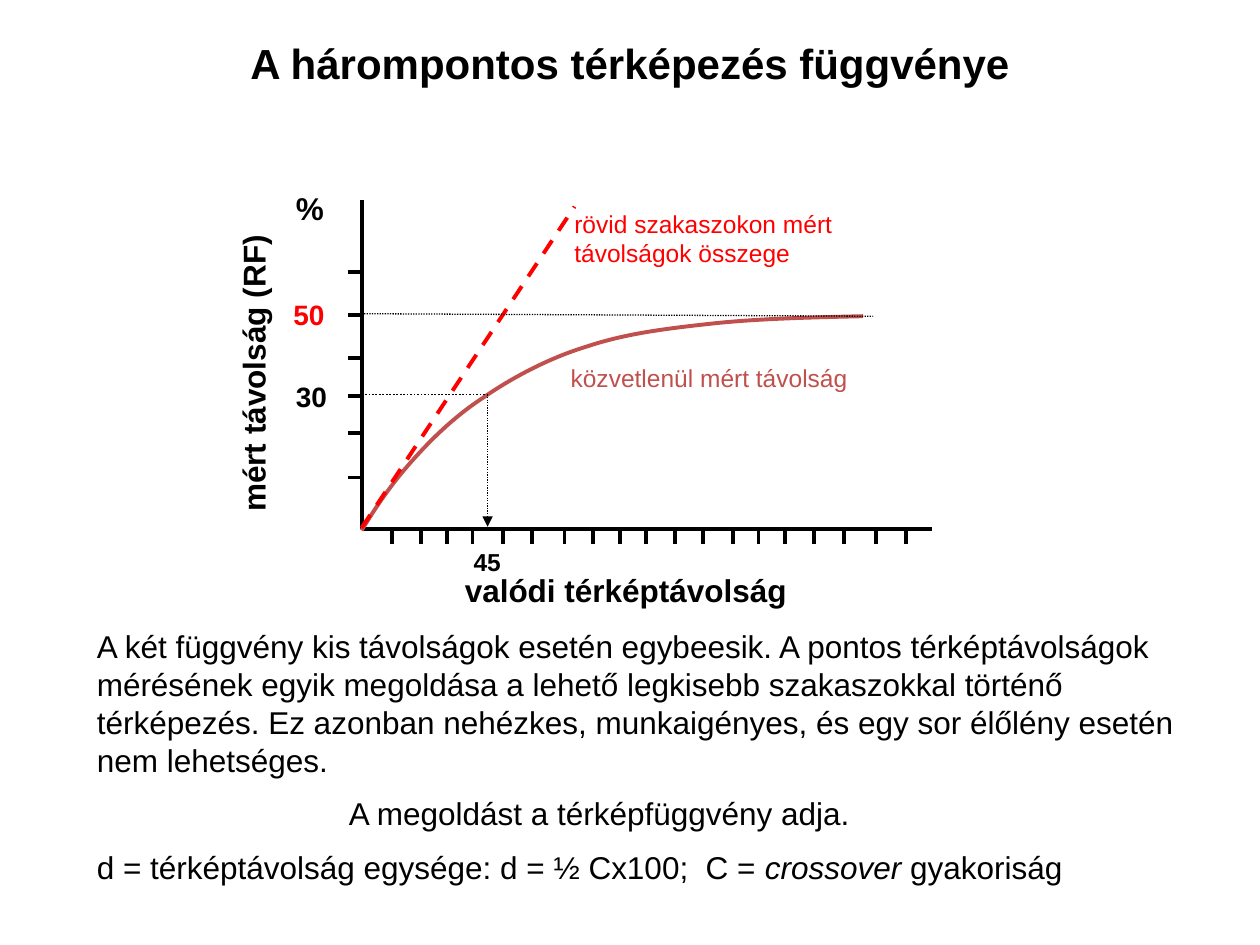
from dataclasses import dataclass

from lxml.etree import SubElement
from pptx import Presentation
from pptx.dml.color import RGBColor
from pptx.enum.dml import MSO_LINE
from pptx.enum.shapes import MSO_CONNECTOR
from pptx.enum.text import MSO_AUTO_SIZE, PP_ALIGN
from pptx.oxml.ns import qn
from pptx.util import Inches, Pt

COLORS = {"black": "000000", "red": "FF0000", "curve": "C0504D"}
ORIGIN_X = 2.87
AXIS_Y = 4.2


@dataclass
class Line:
    start: tuple[float, float]
    end: tuple[float, float]
    color: str = "black"
    width: float = 2.25
    dash: MSO_LINE | None = None
    arrow: bool = False


@dataclass
class Label:
    paragraphs: list[str]
    left: float
    top: float
    width: float
    height: float
    size: int = 18
    color: str = "black"
    bold: bool = True
    wrap: bool = False
    rotation: int = 0
    align: PP_ALIGN = PP_ALIGN.LEFT


def add_span(para, text: str, *, size: int = 18, color: str = "black",
             bold: bool = False, italic: bool = False) -> None:
    span = para.add_run()
    span.text = text
    span.font.name = "Arial"
    span.font.size = Pt(size)
    span.font.bold = bold
    span.font.italic = italic
    span.font.color.rgb = RGBColor.from_string(COLORS[color])


def add_box(page, left: float, top: float, width: float, height: float, wrap: bool):
    box = page.shapes.add_textbox(Inches(left), Inches(top), Inches(width), Inches(height))
    box.text_frame.word_wrap = wrap
    box.text_frame.auto_size = MSO_AUTO_SIZE.SHAPE_TO_FIT_TEXT
    return box


def add_label(page, label: Label) -> None:
    box = add_box(page, label.left, label.top, label.width, label.height, label.wrap)
    box.rotation = label.rotation
    for index, text in enumerate(label.paragraphs):
        para = box.text_frame.add_paragraph() if index else box.text_frame.paragraphs[0]
        para.alignment = label.align
        add_span(para, text, size=label.size, color=label.color, bold=label.bold)


def add_line(page, line: Line) -> None:
    connector = page.shapes.add_connector(
        MSO_CONNECTOR.STRAIGHT, *map(Inches, (*line.start, *line.end)))
    connector.line.color.rgb = RGBColor.from_string(COLORS[line.color])
    connector.line.width = Pt(line.width)
    if line.dash:
        connector.line.dash_style = line.dash
    if line.arrow:
        SubElement(connector.line._get_or_add_ln(), qn("a:tailEnd"), type="triangle")
    SubElement(connector._element.spPr, qn("a:effectLst"))


def add_curve(page, points: list[tuple[float, float]], color: str) -> None:
    vertices = [(Inches(x), Inches(y)) for x, y in points]
    builder = page.shapes.build_freeform(*vertices[0], scale=1.0)
    builder.add_line_segments(vertices[1:], close=False)
    curve = builder.convert_to_shape()
    curve.shadow.inherit = False
    curve.fill.background()
    curve.line.color.rgb = RGBColor.from_string(COLORS[color])
    curve.line.width = Pt(2.25)
    outline = curve._element.find(".//" + qn("a:pathLst"))[0]
    segments = outline.findall(qn("a:lnTo"))
    for first in range(0, len(segments), 3):
        bezier = SubElement(outline, qn("a:cubicBezTo"))
        for segment in segments[first:first + 3]:
            bezier.append(segment[0])
            outline.remove(segment)


def add_explanation(page) -> None:
    frame = add_box(page, 0.67, 4.93, 9.08, 2.2, True).text_frame
    add_span(frame.paragraphs[0],
             "A két függvény kis távolságok esetén egybeesik. A pontos térképtávolságok "
             "mérésének egyik megoldása a lehető legkisebb szakaszokkal történő "
             "térképezés. Ez azonban nehézkes, munkaigényes, és egy sor élőlény esetén "
             "nem lehetséges.")
    solution = frame.add_paragraph()
    solution._p.get_or_add_pPr().set("marL", str(Inches(2)))
    add_span(solution, "A megoldást a térképfüggvény adja.")
    formula = frame.add_paragraph()
    add_span(formula, "d = térképtávolság egysége: d = ½ Cx100;  C = ")
    add_span(formula, "crossover", italic=True)
    add_span(formula, " gyakoriság")
    for para in frame.paragraphs:
        para.space_before = Pt(9)


CURVE = [
    (2.87, 4.21), (2.98, 4.03), (3.1, 3.85), (3.26, 3.67),
    (3.41, 3.5), (3.6, 3.31), (3.83, 3.16),
    (4.06, 3), (4.36, 2.84), (4.66, 2.75),
    (4.96, 2.65), (5.27, 2.61), (5.64, 2.57),
    (6, 2.53), (6.43, 2.52), (6.85, 2.51),
]
HORIZONTAL_TICKS = [3.11, 3.34, 3.55, 3.75, 3.99, 4.22, 4.48, 4.71, 4.92, 5.13,
                    5.36, 5.58, 5.82, 6.02, 6.23, 6.46, 6.7, 6.95, 7.19]
VERTICAL_TICKS = [2.16, 2.5, 2.84, 3.14, 3.44, 3.79]
AXES = [
    Line((ORIGIN_X, 1.59), (ORIGIN_X, AXIS_Y)),
    Line((ORIGIN_X, AXIS_Y), (7.4, AXIS_Y)),
]
GUIDES = [
    Line((ORIGIN_X, 4.19), (4.56, 1.64), "red", dash=MSO_LINE.DASH),
    Line((2.89, 2.49), (6.93, 2.51), width=0.75, dash=MSO_LINE.ROUND_DOT),
    Line((ORIGIN_X, 3.13), (3.88, 3.13), width=1, dash=MSO_LINE.ROUND_DOT),
    Line((3.87, 3.13), (3.87, 4.18), width=0.75, dash=MSO_LINE.ROUND_DOT, arrow=True),
]
LABELS = [
    Label(["A hárompontos térképezés függvénye"], 0.25, 0.25, 9.5, 0.5, size=24,
          wrap=True, align=PP_ALIGN.CENTER),
    Label(["mért távolság (RF)"], 0.8, 2.75, 2.42, 0.4, rotation=270),
    Label(["valódi térképtávolság"], 3.59, 4.48, 2.78, 0.4),
    Label(["%"], 2.25, 1.45, 0.43, 0.4),
    Label(["50"], 2.23, 2.31, 0.53, 0.37, size=16, color="red", wrap=True),
    Label(["30"], 2.25, 2.96, 0.45, 0.37, size=16),
    Label(["45"], 3.66, 4.29, 0.42, 0.34, size=14),
    Label(["rövid szakaszokon mért", "távolságok összege"], 4.46, 1.61, 2.31, 0.57,
          size=14, color="red", bold=False),
    Label(["közvetlenül mért távolság"], 4.43, 2.83, 2.41, 0.34,
          size=14, color="curve", bold=False),
]


def main() -> None:
    deck = Presentation()
    deck.slide_width, deck.slide_height = Inches(10), Inches(7.5)
    page = deck.slides.add_slide(deck.slide_layouts[6])
    add_explanation(page)
    for axis in AXES:
        add_line(page, axis)
    add_curve(page, CURVE, "curve")
    for y in VERTICAL_TICKS:
        add_line(page, Line((2.76, y), (2.88, y)))
    for x in HORIZONTAL_TICKS:
        add_line(page, Line((x, 4.19), (x, 4.32)))
    for guide in GUIDES:
        add_line(page, guide)
    for label in LABELS:
        add_label(page, label)
    deck.save("out.pptx")


if __name__ == "__main__":
    main()
